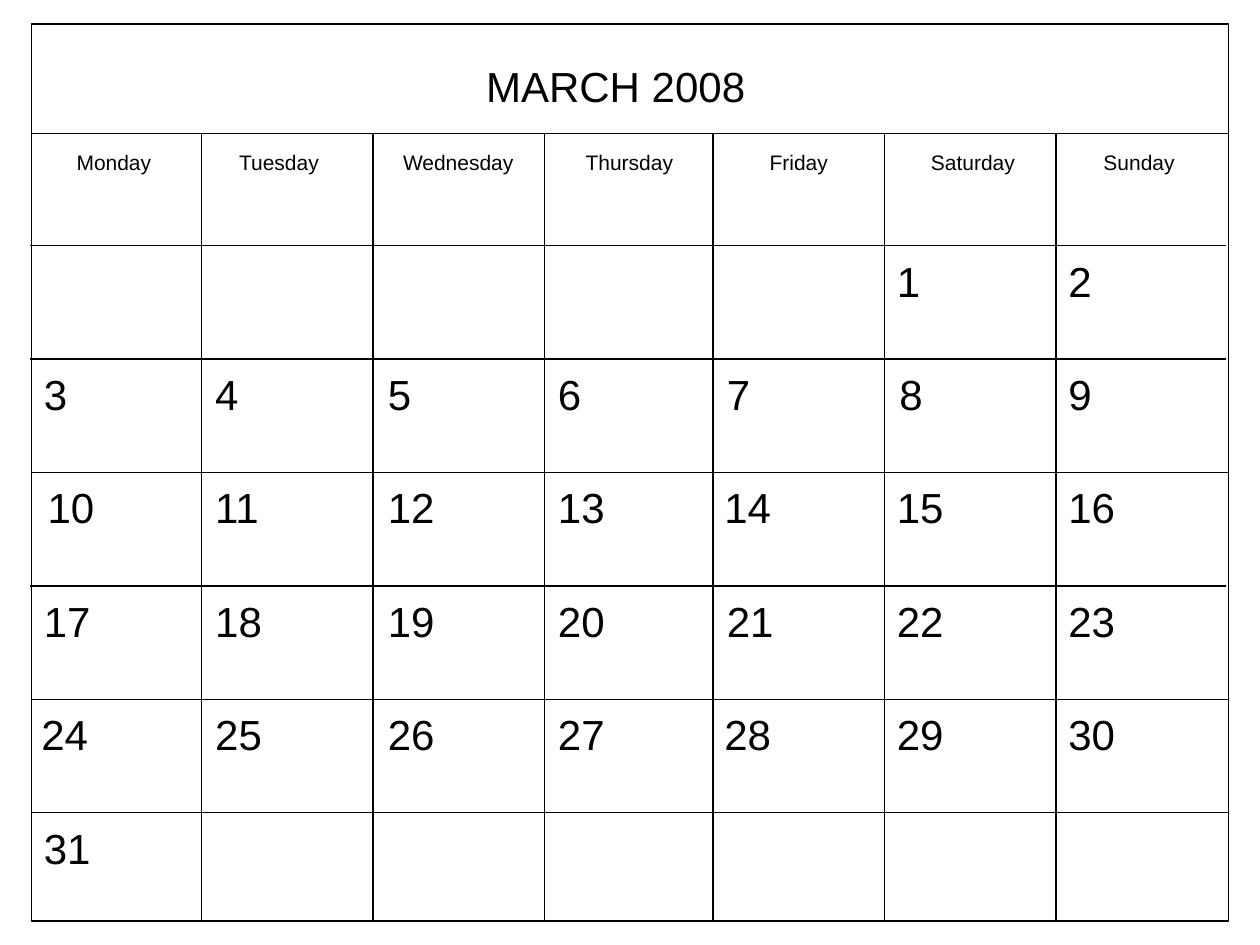
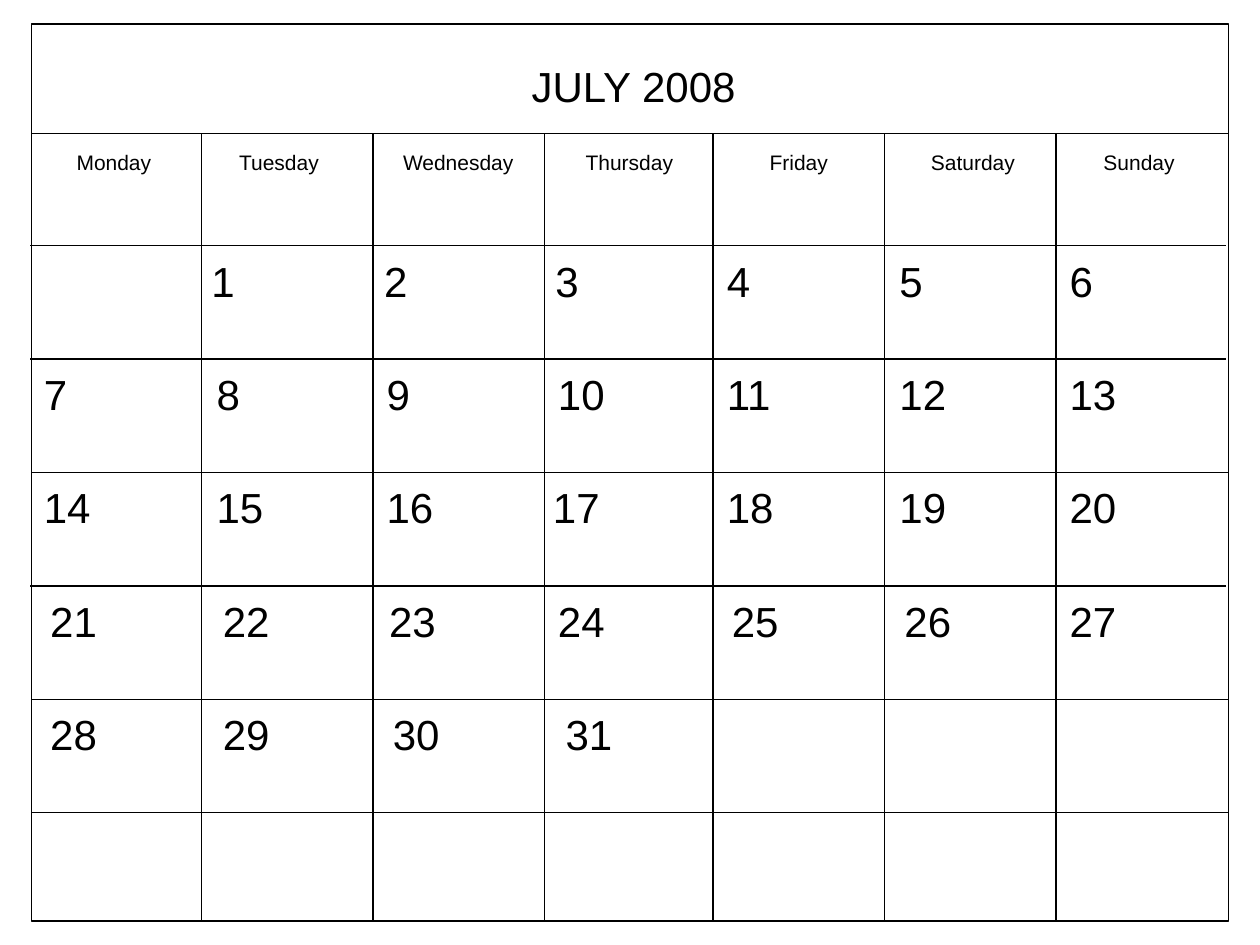
from pptx import Presentation
from pptx.dml.color import RGBColor
from pptx.enum.shapes import MSO_CONNECTOR, MSO_SHAPE
from pptx.enum.text import MSO_ANCHOR, MSO_AUTO_SIZE
from pptx.oxml.ns import qn
from pptx.util import Inches, Pt

HUES = {"ink": "000000", "page": "FFFFFF"}
FONTS = {
    "title": {"name": "Arial", "size": Pt(24)},
    "head": {"name": "Arial", "size": Pt(12)},
    "day": {"name": "Arial", "size": Pt(24)},
}
GROW = {"word_wrap": False, "auto_size": MSO_AUTO_SIZE.SHAPE_TO_FIT_TEXT}
FRAMES = {
    "title": GROW,
    "head": GROW,
    "day": {"word_wrap": False, "auto_size": MSO_AUTO_SIZE.NONE,
            "vertical_anchor": MSO_ANCHOR.MIDDLE},
}

LEFT, TOP, WIDTH, HEIGHT = 0.25, 0.19, 9.5, 7.12
RIGHT, BASE = LEFT + WIDTH, TOP + HEIGHT
BAND = 1.06
FIRST, PITCH = 1.95, 0.9
ROWS = [FIRST + PITCH * row for row in range(6)]
SHIFTED = (0, 1, 3)
COLS = [1.6, 2.96, 4.32, 5.66, 7.02, 8.38]
HEADS = [
    ("Monday", 0.51, 0.8), ("Tuesday", 1.8, 0.84), ("Wednesday", 3.1, 1.08),
    ("Thursday", 4.55, 0.9), ("Friday", 6.01, 0.66), ("Saturday", 7.29, 0.87),
    ("Sunday", 8.66, 0.77),
]
MONTHS = [
    {"name": "MARCH 2008", "left": 3.76, "width": 2.26, "start": 5,
     "cols": [0.25, 1.61, 2.98, 4.33, 5.67, 7.02, 8.38],
     "nudge": {8: 0.02, 10: 0.03, 14: -0.02, 24: -0.02, 28: -0.02}},
    {"name": "JULY 2008", "left": 4.12, "width": 1.85, "start": 1,
     "cols": [0.25, 1.62, 2.97, 4.33, 5.67, 7.04, 8.39],
     "nudge": {1: -0.04, 2: -0.02, 3: -0.02, 17: -0.04, 21: 0.05, 22: 0.05,
               23: 0.02, 25: 0.04, 26: 0.04, 28: 0.05, 29: 0.05, 30: 0.05,
               31: 0.06}},
]


def apply(target, values):
    for key, value in values.items():
        setattr(target, key, value)


def tint(key):
    return RGBColor.from_string(HUES[key])


class Page:
    def __init__(self, deck):
        self.slide = deck.slides.add_slide(deck.slide_layouts[6])
        fill = self.slide.background.fill
        fill.solid()
        fill.fore_color.rgb = tint("page")
        self.grid = self.slide.shapes.add_group_shape().shapes

    def stroke(self, shape):
        shape.line.color.rgb = tint("ink")
        shape.line.width = Pt(0.75)

    def rule(self, *ends):
        line = self.grid.add_connector(
            MSO_CONNECTOR.STRAIGHT, *[Inches(end) for end in ends])
        self.stroke(line)
        props = line._element.spPr
        props.append(props.makeelement(qn("a:effectLst"), {}))

    def frame(self, *box):
        shape = self.grid.add_shape(
            MSO_SHAPE.RECTANGLE, *[Inches(side) for side in box])
        shape.shadow.inherit = False
        shape.fill.background()
        self.stroke(shape)

    def text(self, kind, words, *box):
        shape = self.slide.shapes.add_textbox(*[Inches(side) for side in box])
        apply(shape.text_frame, FRAMES[kind])
        run = shape.text_frame.paragraphs[0].add_run()
        run.text = words
        apply(run.font, FONTS[kind])
        run.font.color.rgb = tint("ink")

    def lattice(self):
        for col in COLS:
            self.rule(col, BAND, col, BASE)
        self.rule(LEFT, BAND, RIGHT, BAND)
        for row, level in enumerate(ROWS):
            start, end = (0.24, 9.73) if row in SHIFTED else (LEFT, RIGHT)
            self.rule(start, level, end, level)
        self.frame(LEFT, TOP, WIDTH, HEIGHT)

    def month(self, month):
        self.lattice()
        self.text("title", month["name"], month["left"], 0.43, month["width"], 0.5)
        for name, left, width in HEADS:
            self.text("head", name, left, 1.14, width, 0.3)
        for day in range(1, 32):
            row, col = divmod(month["start"] + day - 1, 7)
            left = month["cols"][col] + month["nudge"].get(day, 0)
            self.text("day", str(day), left, ROWS[row] + 0.01, 0.75, 0.53)


def main():
    deck = Presentation()
    apply(deck, {"slide_width": Inches(10), "slide_height": Inches(7.5)})
    for month in MONTHS:
        Page(deck).month(month)
    deck.save("out.pptx")


if __name__ == "__main__":
    main()
